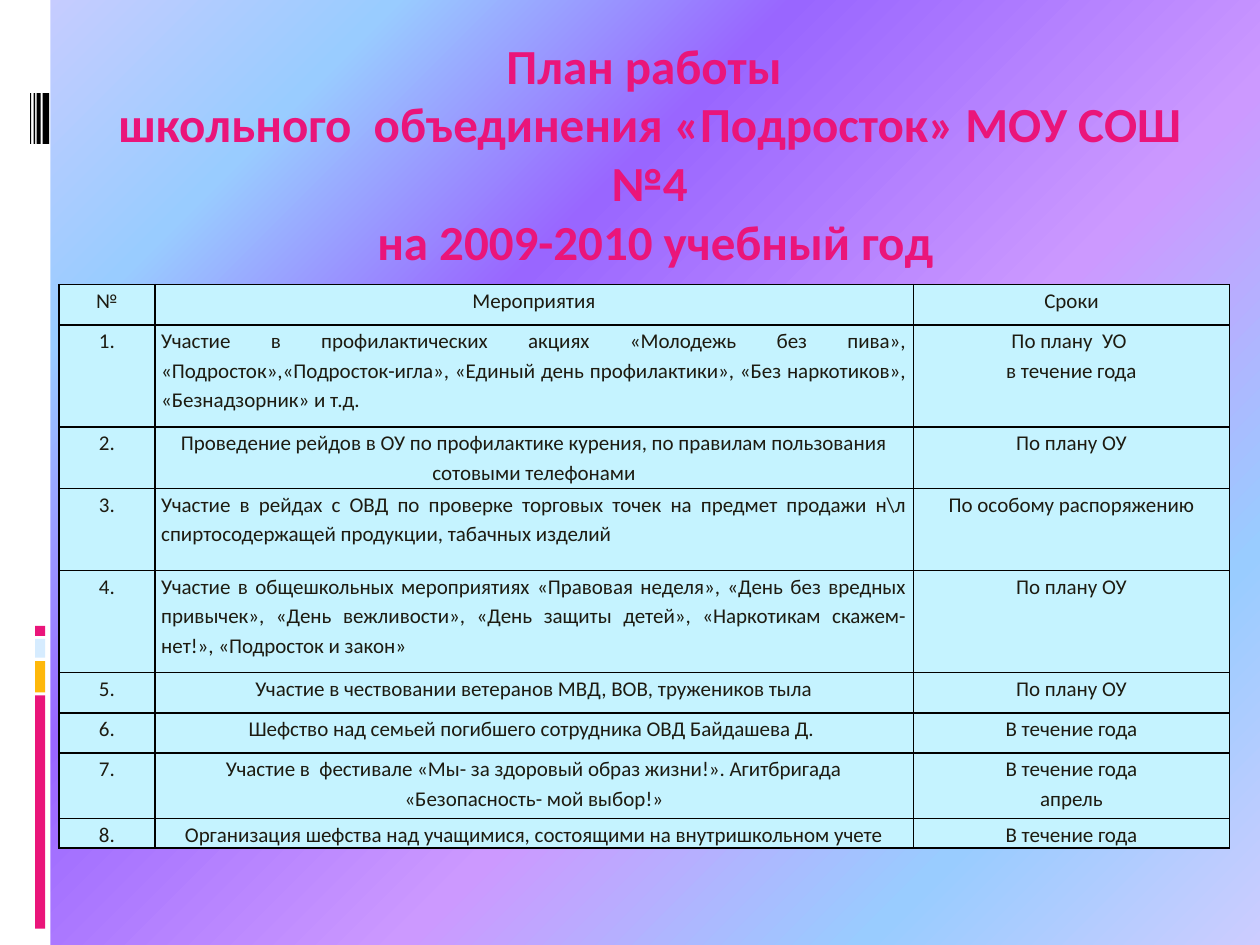
from lxml import etree
from pptx import Presentation
from pptx.dml.color import RGBColor
from pptx.enum import shapes, text
from pptx.oxml import ns
from pptx.util import Cm, Pt

HUES = {"pink": "EA157A", "gold": "FEB80A", "sky": "D6ECFF", "white": "FFFFFF",
        "black": "000000", "cell": "C5F3FF", "ink": "1D1B11"}
STOPS = [(0, "CCCCFF"), (18, "99CCFF"), (36, "9966FF"),
         (61, "CC99FF"), (82, "99CCFF"), (100, "CCCCFF")]
MID, JUST = text.PP_ALIGN.CENTER, text.PP_ALIGN.JUSTIFY


def add_text(frame, lines, size, hue, align, bold=False, space=1.0):
    for i, line in enumerate(lines):
        para = frame.paragraphs[0] if i == 0 else frame.add_paragraph()
        para.alignment = align
        para.line_spacing = space
        run = para.add_run()
        run.text = line
        run.font.name = "Calibri"
        run.font.size = Pt(size)
        run.font.bold = bold
        run.font.color.rgb = RGBColor.from_string(HUES[hue])


def add_edges(cell):
    props = cell._tc.get_or_add_tcPr()
    for i, side in enumerate(("lnL", "lnR", "lnT", "lnB")):
        edge = etree.Element(ns.qn("a:" + side), w=str(Pt(1)))
        fill = etree.SubElement(edge, ns.qn("a:solidFill"))
        etree.SubElement(fill, ns.qn("a:srgbClr"), val=HUES["black"])
        props.insert(i, edge)


deck = Presentation()
deck.slide_width, deck.slide_height = Cm(25.4), Cm(19.05)
slide = deck.slides.add_slide(deck.slide_layouts[5])

# Diagonal background gradient
back = slide.background.fill
back.gradient()
back.gradient_angle = 315
stops = slide.element.find(".//" + ns.qn("a:gsLst"))
for old in list(stops):
    stops.remove(old)
for pos, hue in STOPS:
    stop = etree.SubElement(stops, ns.qn("a:gs"), pos=str(pos * 1000))
    etree.SubElement(stop, ns.qn("a:srgbClr"), val=hue)

# White side strip with its coloured and black bars
bars = [(0, 0, 1.02, 19.05, "white"),
        (0.71, 14.02, 0.2, 4.7, "pink"), (0.71, 13.33, 0.2, 0.63, "gold"),
        (0.71, 12.88, 0.2, 0.38, "sky"), (0.71, 12.62, 0.2, 0.2, "pink"),
        (0.86, 1.88, 0.13, 1.02, "black"), (0.74, 1.88, 0.08, 1.02, "black"),
        (0.68, 1.88, 0.03, 1.02, "black"), (0.61, 1.88, 0.02, 1.02, "black")]
for left, top, width, height, hue in bars:
    bar = slide.shapes.add_shape(shapes.MSO_SHAPE.RECTANGLE,
                                 Cm(left), Cm(top), Cm(width), Cm(height))
    bar.shadow.inherit = False
    bar.fill.solid()
    bar.fill.fore_color.rgb = RGBColor.from_string(HUES[hue])
    bar.line.fill.background()

# Plan table: events with their alignment, and dates
plan = [
    (["Мероприятия"], MID, ["Сроки"]),
    (["Участие в профилактических акциях «Молодежь без пива», «Подросток»,"
      "«Подросток-игла», «Единый день профилактики», «Без наркотиков», "
      "«Безнадзорник» и т.д."], JUST, ["По плану  УО ", "в течение года"]),
    (["Проведение рейдов в ОУ по профилактике курения, по правилам "
      "пользования сотовыми телефонами"], MID, ["По плану ОУ"]),
    (["Участие в рейдах с ОВД по проверке торговых точек на предмет продажи "
      "н\\л спиртосодержащей продукции, табачных изделий"], JUST,
     ["По особому распоряжению"]),
    (["Участие в общешкольных мероприятиях «Правовая неделя», «День без "
      "вредных привычек», «День вежливости», «День защиты детей», "
      "«Наркотикам скажем-нет!», «Подросток и закон»"], JUST, ["По плану ОУ"]),
    (["Участие в чествовании ветеранов МВД, ВОВ, тружеников тыла"], MID,
     ["По плану ОУ"]),
    (["Шефство над семьей погибшего сотрудника ОВД Байдашева Д. "], MID,
     ["В течение года"]),
    (["Участие в  фестивале «Мы- за здоровый образ жизни!». Агитбригада "
      "«Безопасность- мой выбор!»"], MID, ["В течение года", "апрель"]),
    (["Организация шефства над учащимися, состоящими на внутришкольном учете"],
     MID, ["В течение года"]),
]
widths = [1.93, 15.29, 6.38]
heights = [0.81, 2.06, 1.24, 1.65, 2.06, 0.81, 0.81, 1.32, 0.59]
table = slide.shapes.add_table(len(plan), len(widths), Cm(1.19), Cm(5.74),
                               Cm(sum(widths)), Cm(sum(heights))).table
table.first_row = table.horz_banding = False
for col, width in zip(table.columns, widths):
    col.width = Cm(width)
for i, (event, align, date) in enumerate(plan):
    table.rows[i].height = Cm(heights[i])
    number = [f"{i}." if i else "№"]
    parts = [(number, MID), (event, align), (date, MID)]
    for cell, (lines, side) in zip(table.rows[i].cells, parts):
        cell.margin_left = cell.margin_right = Cm(0.13)
        cell.margin_top = cell.margin_bottom = 0
        cell.fill.solid()
        cell.fill.fore_color.rgb = RGBColor.from_string(HUES["cell"])
        add_edges(cell)
        add_text(cell.text_frame, lines, 12, "ink", side, space=1.15)

# Title, in front of the table
title = slide.shapes.title
title.left, title.top, title.width, title.height = Cm(1.78), Cm(0.58), Cm(22.63), Cm(6.58)
frame = title.text_frame
frame.word_wrap = True
frame.auto_size = text.MSO_AUTO_SIZE.NONE
frame.vertical_anchor = text.MSO_ANCHOR.TOP
add_text(frame, ["План работы ", "школьного  объединения «Подросток» МОУ СОШ №4",
                 " на 2009-2010 учебный год"], 28, "pink", MID, bold=True)
title.element.getparent().append(title.element)

deck.save("out.pptx")
